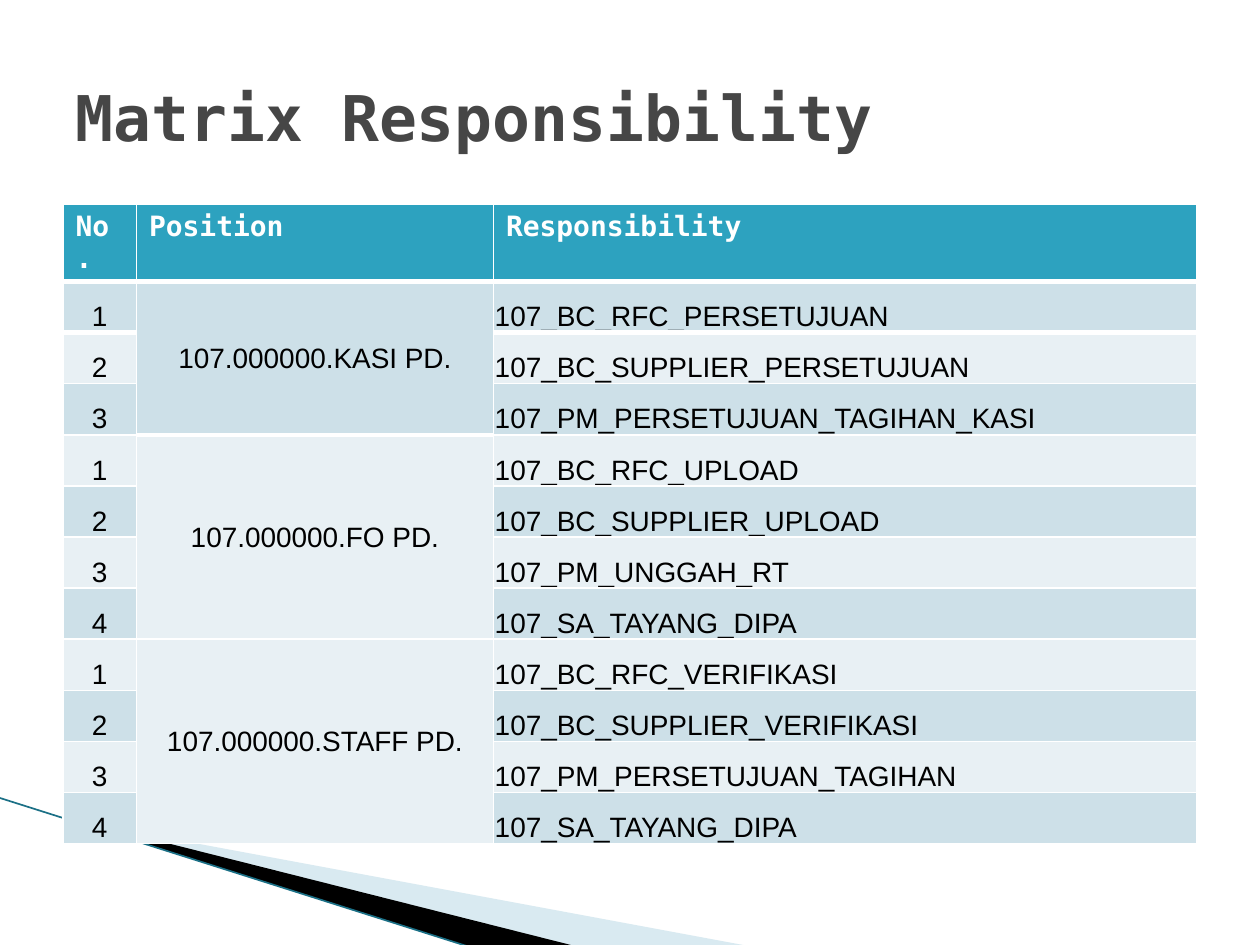
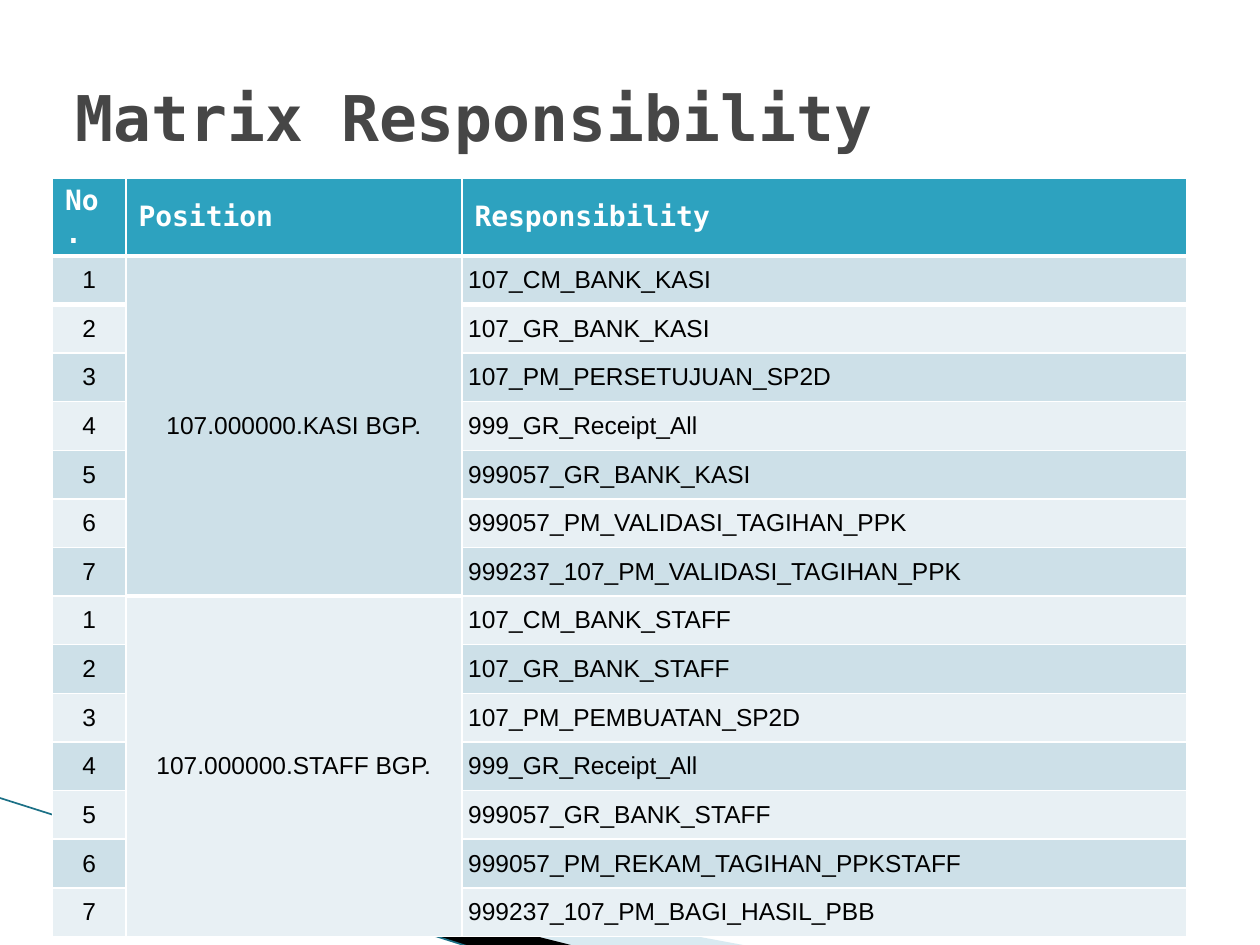
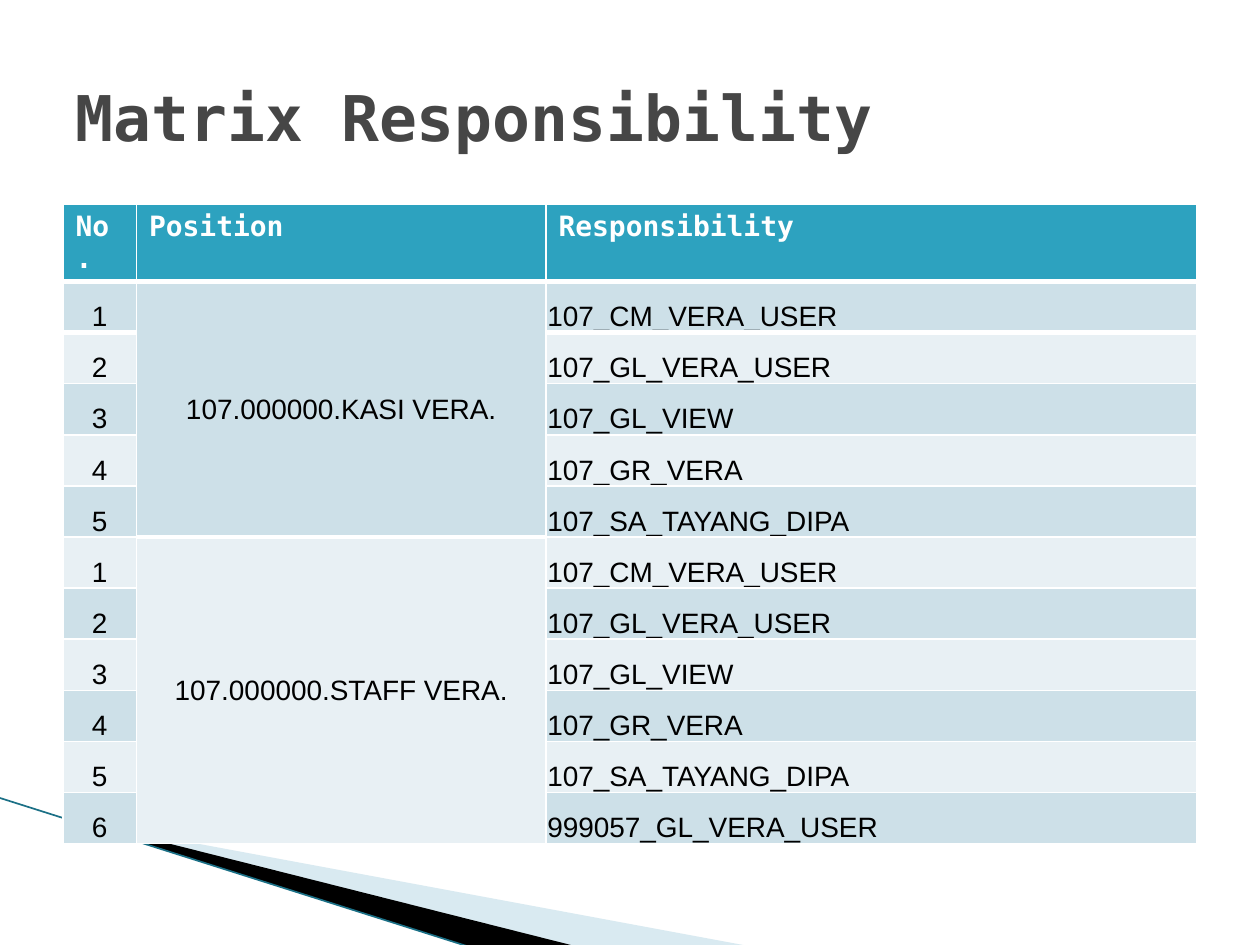
from lxml import etree
from pptx import Presentation
from pptx.dml.color import RGBColor
from pptx.enum import shapes, text
from pptx.oxml import ns
from pptx.util import Pt

WHITE = RGBColor(0xFF, 0xFF, 0xFF)
BLACK = RGBColor(0x00, 0x00, 0x00)
TITLE_GREY = RGBColor(0x46, 0x46, 0x46)
HEADER_TEAL = RGBColor(0x2D, 0xA2, 0xBF)
BAND_DARK = RGBColor(0xCD, 0xE0, 0xE8)
BAND_LIGHT = RGBColor(0xE8, 0xF0, 0xF4)
WEDGE_BLUE = RGBColor(0xA0, 0xCB, 0xDC)
EDGE_TEAL = RGBColor(0x1B, 0x70, 0x86)
HEADING_FONT = "DejaVu Sans Mono"
BODY_FONT = "Arial"

HEADERS = ["No.", "Position", "Responsibility"]
MIDDLE, BOTTOM, TOP = text.MSO_ANCHOR.MIDDLE, text.MSO_ANCHOR.BOTTOM, text.MSO_ANCHOR.TOP
CENTER, LEFT = text.PP_ALIGN.CENTER, text.PP_ALIGN.LEFT

# Settings for the two table styles
ROOMY = dict(left=36, top=116.7, row_height=29.22, size=16, header_anchor=TOP,
             body_anchor=BOTTOM, margins=(0.75, 0.75, 0.75, 0))
COMPACT = dict(left=30, top=102, row_height=27.79, size=14, header_anchor=MIDDLE,
               body_anchor=MIDDLE, margins=(3.6, 3.6, 3.6, 3.6))

# Each slide: table style, column widths, responsibilities by position
MATRICES = [
    (ROOMY, (42, 204, 402), {
        "107.000000.KASI PD.": [
            "107_BC_RFC_PERSETUJUAN", "107_BC_SUPPLIER_PERSETUJUAN",
            "107_PM_PERSETUJUAN_TAGIHAN_KASI"],
        "107.000000.FO PD.": [
            "107_BC_RFC_UPLOAD", "107_BC_SUPPLIER_UPLOAD",
            "107_PM_UNGGAH_RT", "107_SA_TAYANG_DIPA"],
        "107.000000.STAFF PD.": [
            "107_BC_RFC_VERIFIKASI", "107_BC_SUPPLIER_VERIFIKASI",
            "107_PM_PERSETUJUAN_TAGIHAN", "107_SA_TAYANG_DIPA"],
    }),
    (COMPACT, (42, 192, 414), {
        "107.000000.KASI BGP.": [
            "107_CM_BANK_KASI", "107_GR_BANK_KASI", "107_PM_PERSETUJUAN_SP2D",
            "999_GR_Receipt_All", "999057_GR_BANK_KASI",
            "999057_PM_VALIDASI_TAGIHAN_PPK", "999237_107_PM_VALIDASI_TAGIHAN_PPK"],
        "107.000000.STAFF BGP.": [
            "107_CM_BANK_STAFF", "107_GR_BANK_STAFF", "107_PM_PEMBUATAN_SP2D",
            "999_GR_Receipt_All", "999057_GR_BANK_STAFF",
            "999057_PM_REKAM_TAGIHAN_PPKSTAFF", "999237_107_PM_BAGI_HASIL_PBB"],
    }),
    (ROOMY, (42, 234, 372), {
        "107.000000.KASI VERA.": [
            "107_CM_VERA_USER", "107_GL_VERA_USER", "107_GL_VIEW",
            "107_GR_VERA", "107_SA_TAYANG_DIPA"],
        "107.000000.STAFF VERA.": [
            "107_CM_VERA_USER", "107_GL_VERA_USER", "107_GL_VIEW",
            "107_GR_VERA", "107_SA_TAYANG_DIPA", "999057_GL_VERA_USER"],
    }),
]

# Corner wedges: colour, opacity in percent, frame, outline points
WEDGES = [
    (WEDGE_BLUE, 40, (56.2, 393.8, 299.5, 113.8),
     [(39.6, 468.5), (428.4, 540.7), (328.3, 540.7), (39.6, 468)]),
    (BLACK, 100, (-4.3, 455.8, 299.5, 66.2),
     [(38.2, 467.3), (329, 540.7), (267.8, 541), (38.9, 468)]),
]


def write(frame, words, font_name, size, color, bold, alignment=LEFT):
    paragraph = frame.paragraphs[0]
    paragraph.alignment = alignment
    run = paragraph.add_run()
    run.text = words
    run.font.name = font_name
    run.font.size = Pt(size)
    run.font.color.rgb = color
    run.font.bold = bold


def fill_cell(cell, color, anchor, margins=None):
    cell.fill.solid()
    cell.fill.fore_color.rgb = color
    cell.vertical_anchor = anchor
    if margins:
        (cell.margin_left, cell.margin_top,
         cell.margin_right, cell.margin_bottom) = map(Pt, margins)


presentation = Presentation()
presentation.slide_width = Pt(720)
presentation.slide_height = Pt(540)
title_only = presentation.slide_layouts[5]

for style, widths, positions in MATRICES:
    slide = presentation.slides.add_slide(title_only)

    # Corner decoration: outlines reach beyond the frames of their shapes
    for color, opacity, frame, points in WEDGES:
        corners = [(Pt(x), Pt(y)) for x, y in points]
        builder = slide.shapes.build_freeform(*corners[0])
        builder.add_line_segments(corners[1:])
        wedge = builder.convert_to_shape()
        wedge.left, wedge.top, wedge.width, wedge.height = map(Pt, frame)
        outline = wedge._element.find(".//" + ns.qn("a:path"))
        outline.set("w", str(wedge.width))
        outline.set("h", str(wedge.height))
        for point, (x, y) in zip(outline.iter(ns.qn("a:pt")), corners):
            point.set("x", str(x - wedge.left))
            point.set("y", str(y - wedge.top))
        wedge.shadow.inherit = False
        wedge.line.fill.background()
        wedge.fill.solid()
        wedge.fill.fore_color.rgb = color
        if opacity < 100:
            tint = wedge._element.spPr.find(".//" + ns.qn("a:srgbClr"))
            etree.SubElement(tint, ns.qn("a:alpha"), val=str(opacity * 1000))
    edge = slide.shapes.add_connector(
        shapes.MSO_CONNECTOR.STRAIGHT, Pt(-0.7), Pt(455.8), Pt(268), Pt(541))
    edge.line.color.rgb = EDGE_TEAL
    edge.line.width = Pt(0.95)
    etree.SubElement(edge._element.spPr, ns.qn("a:effectLst"))

    # Title
    title = slide.shapes.title
    title.left, title.top, title.width, title.height = Pt(36), Pt(21.6), Pt(648), Pt(90)
    title.text_frame.vertical_anchor = MIDDLE
    write(title.text_frame, "Matrix Responsibility", HEADING_FONT, 36, TITLE_GREY, True)

    # Table grid and header
    row_count = 1 + sum(len(names) for names in positions.values())
    table = slide.shapes.add_table(
        row_count, len(HEADERS), Pt(style["left"]), Pt(style["top"]),
        Pt(sum(widths)), Pt(style["row_height"] * row_count)).table
    for column, width in zip(table.columns, widths):
        column.width = Pt(width)
    for row in table.rows:
        row.height = Pt(style["row_height"])
    for column_index, header in enumerate(HEADERS):
        cell = table.cell(0, column_index)
        fill_cell(cell, HEADER_TEAL, style["header_anchor"])
        write(cell.text_frame, header, HEADING_FONT, 16, WHITE, True)

    # Body: one merged position cell for each group of responsibilities
    row_index = 1
    for position, responsibilities in positions.items():
        first_row = row_index
        for number, responsibility in enumerate(responsibilities, 1):
            band = BAND_DARK if row_index % 2 else BAND_LIGHT
            for column_index in range(len(HEADERS)):
                anchor = MIDDLE if column_index == 1 else style["body_anchor"]
                fill_cell(table.cell(row_index, column_index), band, anchor, style["margins"])
            write(table.cell(row_index, 0).text_frame, str(number),
                  BODY_FONT, style["size"], BLACK, False, CENTER)
            write(table.cell(row_index, 2).text_frame, responsibility,
                  BODY_FONT, style["size"], BLACK, False)
            row_index += 1
        position_cell = table.cell(first_row, 1)
        position_cell.merge(table.cell(row_index - 1, 1))
        write(position_cell.text_frame, position,
              BODY_FONT, style["size"], BLACK, False, CENTER)

    # Thick rule between header and body
    for column_index in range(len(HEADERS)):
        for rule_row, side in enumerate(("a:lnB", "a:lnT")):
            properties = table.cell(rule_row, column_index)._tc.get_or_add_tcPr()
            rule = etree.Element(ns.qn(side), w=str(Pt(3)))
            paint = etree.SubElement(rule, ns.qn("a:solidFill"))
            etree.SubElement(paint, ns.qn("a:srgbClr"), val=str(WHITE))
            properties.insert(0, rule)

presentation.save("out.pptx")
